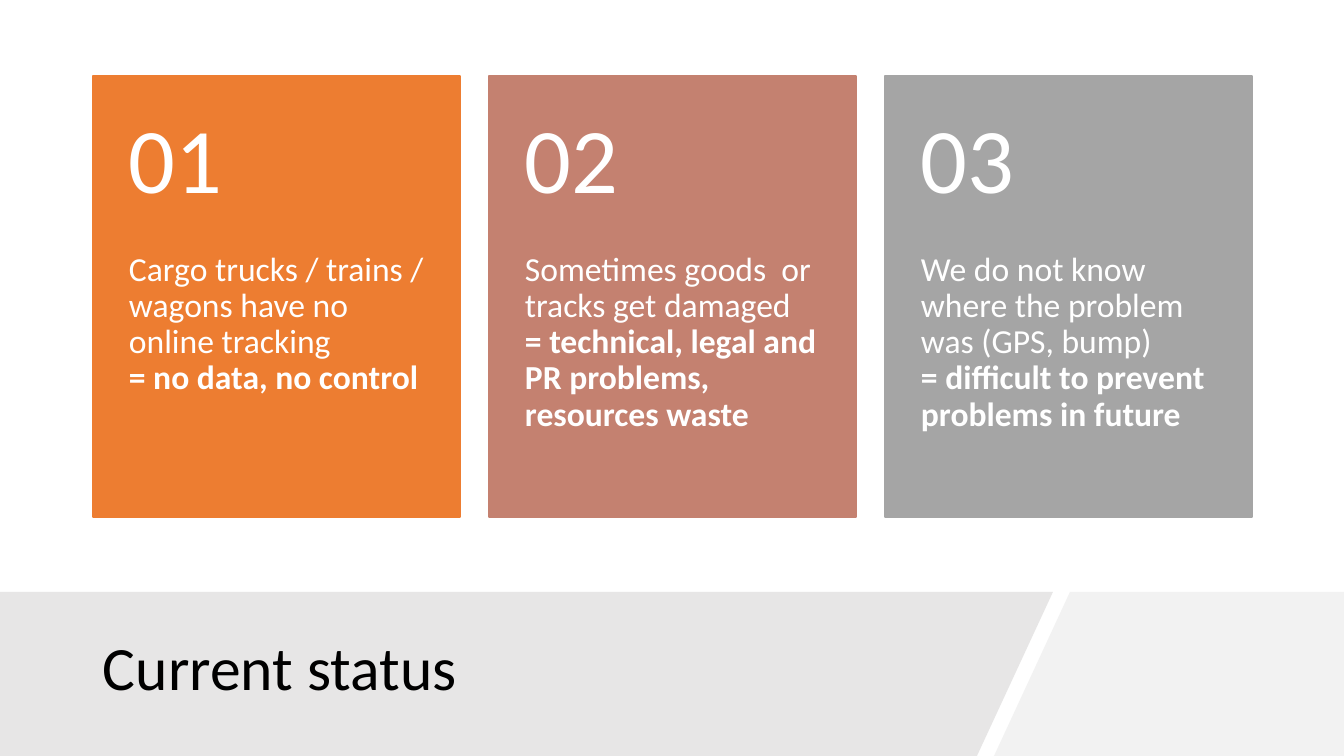
from dataclasses import dataclass

from pptx import Presentation
from pptx.dml.color import RGBColor
from pptx.enum.shapes import MSO_SHAPE
from pptx.enum.text import MSO_ANCHOR, PP_ALIGN
from pptx.util import Pt

RECTANGLE = MSO_SHAPE.RECTANGLE
TOP, MIDDLE = MSO_ANCHOR.TOP, MSO_ANCHOR.MIDDLE
LEFT = PP_ALIGN.LEFT
EMU_PER_PX = 914400 / 100.8
SLIDE_WIDTH, SLIDE_HEIGHT = 1344, 756


@dataclass(frozen=True)
class Theme:
    """Colours, font and type sizes of the slide."""
    font: str = "Calibri"
    title_size: int = 44
    number_size: int = 66
    body_size: int = 24
    title_color: str = "000000"
    card_text: str = "FFFFFF"
    band_main: str = "E7E6E6"
    band_accent: str = "F2F2F2"
    card_fills: tuple = ("ED7D31", "C48170", "A5A5A5")


THEME = Theme()

CARDS = (
    ("01", "Cargo trucks / trains / wagons have no online tracking",
     "= no data, no control"),
    ("02", "Sometimes goods  or tracks get damaged ",
     "= technical, legal and PR problems, resources waste"),
    ("03", "We do not know where the problem was (GPS, bump) ",
     "= difficult to prevent problems in future"),
)


def px(length):
    """Turn a length in px into EMU."""
    return round(length * EMU_PER_PX)


def add_text(slide, box, margins, anchor, size, color):
    """Add an empty wrapped text box and return its formatted paragraph."""
    frame = slide.shapes.add_textbox(*map(px, box)).text_frame
    frame.word_wrap = True
    frame.vertical_anchor = anchor
    frame.margin_left, frame.margin_top, frame.margin_right, frame.margin_bottom = map(px, margins)
    paragraph = frame.paragraphs[0]
    paragraph.alignment = LEFT
    paragraph.line_spacing = 0.9
    paragraph.font.name = THEME.font
    paragraph.font.size = Pt(size)
    paragraph.font.color.rgb = RGBColor.from_string(color)
    return paragraph


def add_panel(slide, points, color):
    """Add a borderless filled outline through the given points."""
    builder = slide.shapes.build_freeform(*points[0], scale=EMU_PER_PX)
    builder.add_line_segments(points[1:], close=True)
    panel = builder.convert_to_shape()
    panel.shadow.inherit = False
    panel.fill.solid()
    panel.fill.fore_color.rgb = RGBColor.from_string(color)
    panel.line.fill.background()


def add_title_band(slide, box, title):
    """Add the two slanted panels and the title over them."""
    left, top, width, height = box
    right, bottom = left + width, top + height
    slant, gap, split = 76, 17, left + 1053
    accent = split + gap
    add_panel(slide, [(accent, top), (right, top), (right, bottom),
                      (accent - slant, bottom)], THEME.band_accent)
    add_panel(slide, [(left, top), (split, top), (split - slant, bottom),
                      (left, bottom)], THEME.band_main)
    paragraph = add_text(slide, (left + 93, top + 18, 890, 121), (10, 5, 10, 5),
                         MIDDLE, THEME.title_size, THEME.title_color)
    paragraph.add_run().text = title


def add_card(slide, box, color, number, problem, consequence):
    """Add a coloured card with a number, a problem and its consequence."""
    left, top, width, height = box
    number_height = 176
    card = slide.shapes.add_shape(RECTANGLE, *map(px, box))
    card.shadow.inherit = False
    card.fill.solid()
    card.fill.fore_color.rgb = card.line.color.rgb = RGBColor.from_string(color)
    card.line.width = Pt(1)

    body = add_text(slide, (left, top + number_height, width, height - number_height),
                    (36, 0, 36, 36), TOP, THEME.body_size, THEME.card_text)
    body.add_run().text = problem
    body.add_line_break()
    emphasis = body.add_run()
    emphasis.text = consequence
    emphasis.font.bold = True

    heading = add_text(slide, (left, top, width, number_height), (36, 18, 36, 18),
                       MIDDLE, THEME.number_size, THEME.card_text)
    heading.add_run().text = number


def add_card_row(slide, box, gap):
    """Spread the cards evenly across the box."""
    left, top, width, height = box
    card_width = (width - gap * (len(CARDS) - 1)) // len(CARDS)
    for index, (card, color) in enumerate(zip(CARDS, THEME.card_fills)):
        card_left = left + index * (card_width + gap)
        add_card(slide, (card_left, top, card_width, height), color, *card)


def main():
    """Build and save the presentation."""
    presentation = Presentation()
    presentation.slide_width = px(SLIDE_WIDTH)
    presentation.slide_height = px(SLIDE_HEIGHT)
    slide = presentation.slides.add_slide(presentation.slide_layouts[6])
    band_top = 592
    add_title_band(slide, (0, band_top, SLIDE_WIDTH, SLIDE_HEIGHT - band_top),
                   "Current status")
    add_card_row(slide, (93, 76, 1159, 441), 29)
    presentation.save("out.pptx")


if __name__ == "__main__":
    main()
